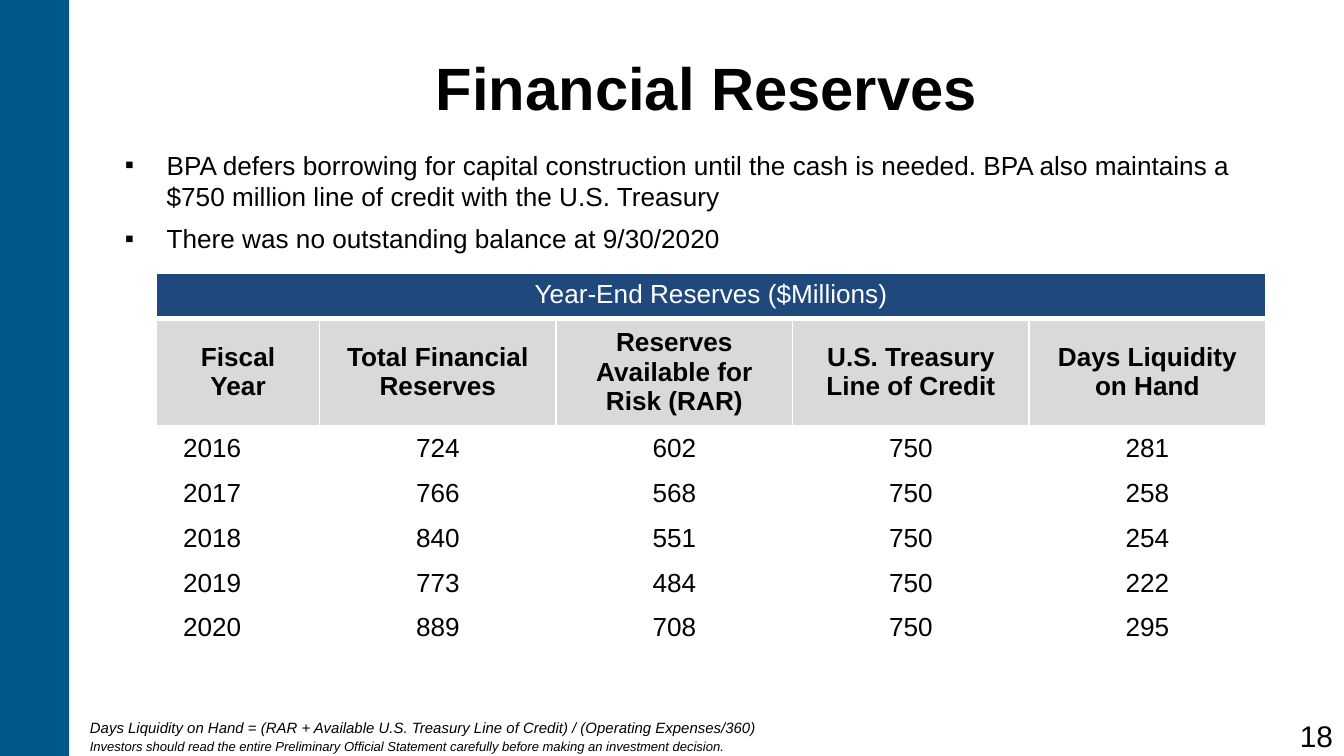
from lxml import etree
from pptx import Presentation
from pptx.dml.color import RGBColor
from pptx.enum.shapes import MSO_SHAPE
from pptx.enum.text import MSO_ANCHOR, PP_ALIGN
from pptx.oxml.ns import qn
from pptx.util import Cm, Pt

RECTANGLE = MSO_SHAPE.RECTANGLE
TOP, MIDDLE = MSO_ANCHOR.TOP, MSO_ANCHOR.MIDDLE
LEFT, CENTER, RIGHT = PP_ALIGN.LEFT, PP_ALIGN.CENTER, PP_ALIGN.RIGHT

FONT = "Arial"
BLACK, WHITE = "000000", "FFFFFF"
BAR_BLUE, TABLE_BLUE, HEADER_GRAY = "00588A", "1F497D", "D9D9D9"

BULLETS = [
    "BPA defers borrowing for capital construction until the cash is needed. "
    "BPA also maintains a $750 million line of credit with the U.S. Treasury",
    "There was no outstanding balance at 9/30/2020",
]
TABLE_TITLE = "Year-End Reserves ($Millions)"
HEADERS = ["Fiscal Year", "Total Financial Reserves", "Reserves Available for Risk (RAR)",
           "U.S. Treasury Line of Credit", "Days Liquidity on Hand"]
RESERVES = [
    (2016, 724, 602, 750, 281),
    (2017, 766, 568, 750, 258),
    (2018, 840, 551, 750, 254),
    (2019, 773, 484, 750, 222),
    (2020, 889, 708, 750, 295),
]
FORMULA = ("Days Liquidity on Hand = (RAR + Available U.S. Treasury Line of Credit)"
           " / (Operating Expenses/360)")
DISCLAIMER = ("Investors should read the entire Preliminary Official Statement carefully "
              "before making an investment decision.")


def color(value):
    return RGBColor.from_string(value)


def write(paragraph, text, size=14, text_color=BLACK, bold=False, italic=False, align=LEFT):
    paragraph.text = text
    paragraph.alignment = align
    font = paragraph.font
    font.name, font.size = FONT, Pt(size)
    font.bold, font.italic = bold, italic
    font.color.rgb = color(text_color)


def add_text_box(slide, left, top, width, height, anchor=TOP):
    shape = slide.shapes.add_textbox(Cm(left), Cm(top), Cm(width), Cm(height))
    frame = shape.text_frame
    frame.word_wrap = True
    frame.vertical_anchor = anchor
    return frame


def add_side_bar(slide, width, height):
    shape = slide.shapes.add_shape(RECTANGLE, 0, 0, Cm(width), height)
    shape.shadow.inherit = False
    shape.fill.solid()
    shape.fill.fore_color.rgb = color(BAR_BLUE)
    shape.line.fill.background()


def add_bullet(paragraph, text):
    properties = paragraph._p.get_or_add_pPr()
    properties.set("marL", str(Cm(0.79)))
    properties.set("indent", str(-Cm(0.79)))
    bullet_color = etree.SubElement(properties, qn("a:buClr"))
    etree.SubElement(bullet_color, qn("a:srgbClr"), val=BLACK)
    etree.SubElement(properties, qn("a:buFont"), typeface=FONT)
    etree.SubElement(properties, qn("a:buChar"), char="▪")
    paragraph.space_after = Pt(6)
    write(paragraph, text)


def set_borders(cell, bottom=1):
    properties = cell._tc.get_or_add_tcPr()
    widths = {"a:lnL": 1, "a:lnR": 1, "a:lnT": 1, "a:lnB": bottom}
    for position, (tag, width) in enumerate(widths.items()):
        line = etree.Element(qn(tag), w=str(Pt(width)))
        fill = etree.SubElement(line, qn("a:solidFill"))
        etree.SubElement(fill, qn("a:srgbClr"), val=WHITE)
        properties.insert(position, line)


def fill_cell(cell, text, fill, anchor=MIDDLE, bottom=1, **text_format):
    cell.fill.solid()
    cell.fill.fore_color.rgb = color(fill)
    cell.vertical_anchor = anchor
    set_borders(cell, bottom)
    write(cell.text_frame.paragraphs[0], text, **text_format)


def add_reserves_table(slide):
    row_heights = [0.8, 1.7] + [0.8] * len(RESERVES)
    column_widths = [3.08] + [4.47] * (len(HEADERS) - 1)
    frame = slide.shapes.add_table(len(row_heights), len(column_widths), Cm(2.96), Cm(5.17),
                                   Cm(sum(column_widths)), Cm(sum(row_heights)))
    table = frame.table
    for column, width in zip(table.columns, column_widths):
        column.width = Cm(width)
    for row, height in zip(table.rows, row_heights):
        row.height = Cm(height)

    # Title row across all columns
    table.cell(0, 0).merge(table.cell(0, len(HEADERS) - 1))
    fill_cell(table.cell(0, 0), TABLE_TITLE, TABLE_BLUE, anchor=TOP, bottom=3,
              text_color=WHITE, align=CENTER)

    # Column headings
    for index, heading in enumerate(HEADERS):
        fill_cell(table.cell(1, index), heading, HEADER_GRAY, bold=True, align=CENTER)

    # Yearly values, with the year indented from the left
    for row_index, values in enumerate(RESERVES, start=2):
        for column_index, value in enumerate(values):
            cell = table.cell(row_index, column_index)
            is_year = column_index == 0
            fill_cell(cell, str(value), WHITE, align=LEFT if is_year else CENTER)
            if is_year:
                cell.margin_left, cell.margin_right = Cm(0.5), 0


def main():
    presentation = Presentation()
    presentation.slide_width, presentation.slide_height = Cm(25.4), Cm(14.29)
    slide = presentation.slides.add_slide(presentation.slide_layouts[6])

    # Side bar and title
    add_side_bar(slide, 1.31, presentation.slide_height)
    title = add_text_box(slide, 1.32, 0.38, 24.08, 2.67, anchor=MIDDLE).paragraphs[0]
    title.line_spacing = 0.9
    write(title, "Financial Reserves", size=32, bold=True, align=CENTER)

    # Bullets and table
    body = add_text_box(slide, 2.11, 2.69, 22.23, 2.26)
    for index, text in enumerate(BULLETS):
        add_bullet(body.add_paragraph() if index else body.paragraphs[0], text)
    add_reserves_table(slide)

    # Footnotes
    formula = add_text_box(slide, 1.45, 13.46, 22.71, 0.79)
    write(formula.paragraphs[0], FORMULA, size=8, italic=True)
    disclaimer = add_text_box(slide, 1.45, 13.84, 12.78, 0.53)
    write(disclaimer.paragraphs[0], DISCLAIMER, size=7, italic=True)

    # Page number
    number = add_text_box(slide, 24.28, 13.46, 1.09, 0.76)
    number.margin_left = number.margin_right = Cm(0.18)
    number.margin_top = number.margin_bottom = Cm(0.1)
    write(number.paragraphs[0], "18", size=16, align=RIGHT)

    presentation.save("out.pptx")


if __name__ == "__main__":
    main()
